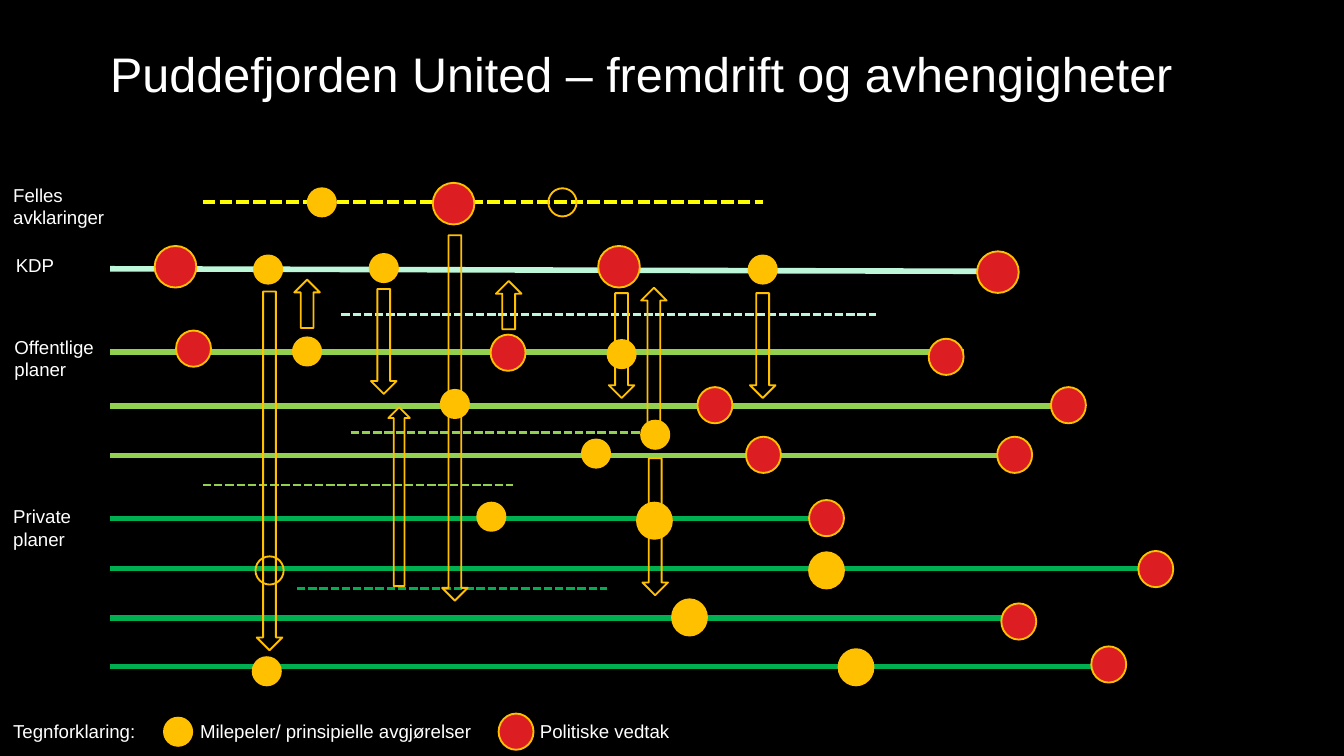
"""Build the progress and dependency chart for Puddefjorden United."""
from typing import NamedTuple, Optional

from lxml import etree
from pptx import Presentation
from pptx import util as u
from pptx.dml.color import RGBColor
from pptx.enum import dml, shapes, text
from pptx.oxml.ns import qn

COLORS = {
    "black": "000000", "white": "FFFFFF", "red": "DC1E23", "amber": "FFC000",
    "yellow": "FFFF00", "mint": "BEF6DA", "lime": "92D050", "green": "00B050",
}
TRACK_START = 59


class Track(NamedTuple):
    start: float
    end: float
    y: float
    color: str
    weight: float = 3
    dashed: bool = False
    drop: float = 0


class Marker(NamedTuple):
    width: float
    height: float
    fill: Optional[str]
    centers: list


class Arrow(NamedTuple):
    center: float
    top: float
    length: float
    up: bool = False
    width: float = 13.7


class Label(NamedTuple):
    content: str
    left: float
    top: float
    width: float
    height: float


TRACKS = [
    Track(TRACK_START, 545.8, 144, "mint", drop=1.4),
    Track(TRACK_START, 516.2, 188.6, "lime"),
    Track(TRACK_START, 581, 217.4, "lime"),
    Track(TRACK_START, 543.6, 244.1, "lime"),
    Track(TRACK_START, 442.8, 277.9, "green"),
    Track(TRACK_START, 618.5, 304.6, "green"),
    Track(TRACK_START, 543.6, 331.2, "green"),
    Track(TRACK_START, 594, 357.1, "green"),
    Track(108.7, 409, 108, "yellow", 2.25, True),
    Track(182.9, 469.4, 168.5, "mint", 1.5, True),
    Track(187.9, 353.5, 231.8, "lime", 1.5, True),
    Track(108.7, 275, 259.9, "lime", 1.5, True),
    Track(159.1, 325.4, 315.4, "green", 1.5, True),
]

ARROWS = [
    Arrow(144.4, 156.2, 192.2),
    Arrow(205.6, 154.8, 56.2),
    Arrow(333, 157, 56.2),
    Arrow(408.6, 157, 56.2),
    Arrow(243.7, 126, 195.8),
    Arrow(351, 245.5, 73.4),
    Arrow(164.5, 149.8, 25.9, up=True),
    Arrow(272.5, 150.5, 25.9, up=True),
    Arrow(350.3, 154.1, 74.9, up=True),
    Arrow(213.8, 218.2, 95.8, up=True, width=11.5),
]

MARKERS = [
    Marker(22.3, 22.3, "red", [(243, 109.1), (94, 142.9), (331.6, 142.9), (534.6, 145.8)]),
    Marker(18.7, 19.4, "red", [
        (103.7, 186.8), (272.2, 189), (506.9, 191.2), (383, 217.1), (572.4, 217.1),
        (409, 243.7), (543.6, 243.7), (442.8, 277.6), (619.2, 304.9), (545.8, 333),
        (594, 356), (276.5, 392),
    ]),
    Marker(18.7, 19.4, "amber", [(350.6, 279), (442.8, 305.6), (369.4, 330.8), (458.6, 357.5)]),
    Marker(15.1, 15.1, "amber", [
        (172.4, 108.4), (143.6, 144.4), (205.6, 143.6), (408.6, 144.4), (164.5, 188.3),
        (333, 189.7), (243.7, 216.4), (351, 232.9), (319.3, 243), (263.2, 276.8),
        (142.9, 359.6), (95.4, 392),
    ]),
    Marker(15.1, 15.1, None, [(301.3, 108.4), (144.4, 305.6)]),
]

LABELS = [
    Label("Felles avklaringer", 0, 95, 81.4, 31.7),
    Label("KDP", 1.4, 132.5, 69.1, 19.4),
    Label("Offentlige planer", 0.7, 176.4, 69.1, 31.7),
    Label("Private planer", 0, 267.1, 69.1, 31.7),
    Label("Tegnforklaring:", 0, 382.3, 87.8, 19.4),
    Label("Milepeler/ prinsipielle avgjørelser", 100.1, 382.3, 180.7, 19.4),
    Label("Politiske vedtak", 282.2, 382.3, 105.8, 19.4),
]


def rgb(name: str) -> RGBColor:
    return RGBColor.from_string(COLORS[name])


def add_text(page, content: str, *, left: float, top: float, width: float, height: float,
             size: float = 10, inset: Optional[float] = None, spacing: float = 1,
             anchor=text.MSO_ANCHOR.TOP, fit=text.MSO_AUTO_SIZE.SHAPE_TO_FIT_TEXT) -> None:
    box = page.shapes.add_textbox(u.Pt(left), u.Pt(top), u.Pt(width), u.Pt(height))
    frame = box.text_frame
    frame.word_wrap = True
    frame.auto_size = fit
    frame.vertical_anchor = anchor
    if inset is not None:
        frame.margin_left = frame.margin_right = u.Pt(inset)
        frame.margin_top = frame.margin_bottom = u.Pt(inset)
    para = frame.paragraphs[0]
    para.line_spacing = spacing
    span = para.add_run()
    span.text = content
    span.font.name = "Arial"
    span.font.size = u.Pt(size)
    span.font.color.rgb = rgb("white")


def add_track(page, track: Track) -> None:
    connector = page.shapes.add_connector(
        shapes.MSO_CONNECTOR.STRAIGHT, u.Pt(track.start), u.Pt(track.y),
        u.Pt(track.end), u.Pt(track.y + track.drop))
    connector.line.color.rgb = rgb(track.color)
    connector.line.width = u.Pt(track.weight)
    if track.dashed:
        connector.line.dash_style = dml.MSO_LINE.SQUARE_DOT
    etree.SubElement(connector._element.spPr, qn("a:effectLst"))


def add_outlined(page, kind, left: float, top: float, width: float, height: float,
                 fill: Optional[str] = None):
    shape = page.shapes.add_shape(kind, u.Pt(left), u.Pt(top), u.Pt(width), u.Pt(height))
    shape.shadow.inherit = False
    if fill:
        shape.fill.solid()
        shape.fill.fore_color.rgb = rgb(fill)
    else:
        shape.fill.background()
    shape.line.color.rgb = rgb("amber")
    shape.line.width = u.Pt(1)
    return shape


def add_arrow(page, arrow: Arrow) -> None:
    shape = add_outlined(page, shapes.MSO_SHAPE.DOWN_ARROW, arrow.center - arrow.width / 2,
                         arrow.top, arrow.width, arrow.length)
    if arrow.up:
        shape.rotation = 180


def add_markers(page, marker: Marker) -> None:
    for x, y in marker.centers:
        add_outlined(page, shapes.MSO_SHAPE.OVAL, x - marker.width / 2, y - marker.height / 2,
                     marker.width, marker.height, marker.fill)


def main() -> None:
    deck = Presentation()
    deck.slide_width, deck.slide_height = u.Pt(720), u.Pt(405)
    page = deck.slides.add_slide(deck.slide_layouts[6])
    page.background.fill.solid()
    page.background.fill.fore_color.rgb = rgb("black")
    add_text(page, "Puddefjorden United – fremdrift og avhengigheter",
             left=TRACK_START, top=7.9, width=608.4, height=66.2, size=26, inset=0,
             spacing=0.9, anchor=text.MSO_ANCHOR.MIDDLE, fit=text.MSO_AUTO_SIZE.NONE)
    for track in TRACKS:
        add_track(page, track)
    for arrow in ARROWS:
        add_arrow(page, arrow)
    for marker in MARKERS:
        add_markers(page, marker)
    for label in LABELS:
        add_text(page, label.content, left=label.left, top=label.top,
                 width=label.width, height=label.height)
    deck.save("out.pptx")


if __name__ == "__main__":
    main()
